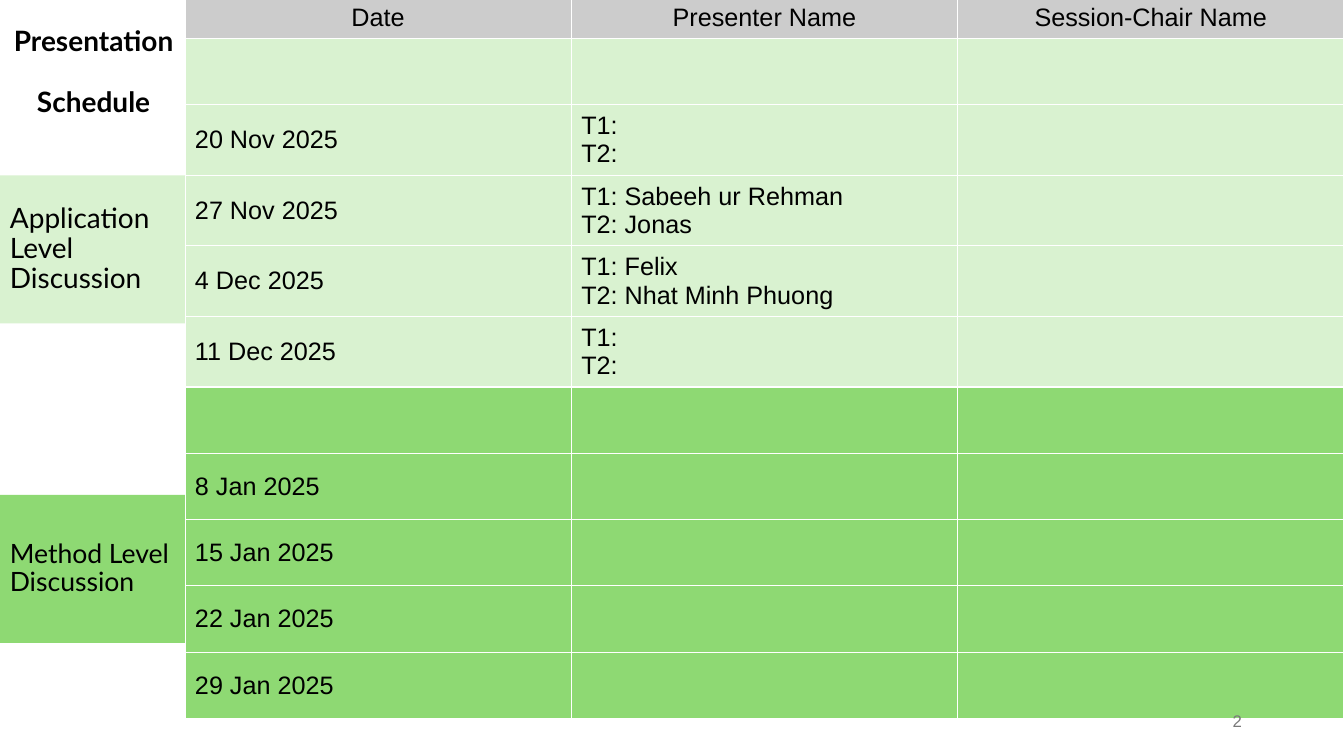
from lxml import etree
from pptx import Presentation
from pptx import util as u
from pptx.dml.color import RGBColor
from pptx.enum import shapes, text
from pptx.oxml import ns

COLORS = {"header": "CCCCCC", "application": "D9F2D0", "method": "8ED973",
          "border": "FFFFFF", "ink": "000000", "number": "797979"}
TITLE = ["Presentation", "Schedule"]
HEADER = ["Date", "Presenter Name", "Session-Chair Name"]
SCHEDULE = [
    ("application", "", []),
    ("application", "20 Nov 2025", ["T1:", "T2:"]),
    ("application", "27 Nov 2025", ["T1: Sabeeh ur Rehman", "T2: Jonas"]),
    ("application", "4 Dec 2025", ["T1: Felix", "T2: Nhat Minh Phuong"]),
    ("application", "11 Dec 2025", ["T1:", "T2:"]),
    ("method", "", []),
    ("method", "8 Jan 2025", []),
    ("method", "15 Jan 2025", []),
    ("method", "22 Jan 2025", []),
    ("method", "29 Jan 2025", []),
]
LABELS = [("application", "Application Level Discussion", 4.42, 20),
          ("method", "Method Level Discussion", 12.47, 19)]
PAGE_NUMBER = "2"

SLIDE_WIDTH, SLIDE_HEIGHT = 33.87, 19.05
SIDE_WIDTH, LABEL_HEIGHT = 4.66, 3.73
TOP, HEADER_HEIGHT, ROW_HEIGHT = -0.05, 0.97, 1.67
COLUMN_WIDTH = (SLIDE_WIDTH - SIDE_WIDTH) / len(HEADER)


def rgb(name):
    return RGBColor.from_string(COLORS[name])


def write(frame, lines, size, font="Arial", color="ink", align=text.PP_ALIGN.LEFT,
          bold=False, spacing=None, gap=0):
    frame.word_wrap = True
    for index, line in enumerate(lines):
        paragraph = frame.add_paragraph() if index else frame.paragraphs[0]
        paragraph.text = line
        paragraph.alignment = align
        if spacing:
            paragraph.line_spacing = spacing
        if index and gap:
            paragraph.space_before = u.Pt(gap)
        paragraph.font.name = font
        paragraph.font.size = u.Pt(size)
        paragraph.font.bold = bold
        paragraph.font.color.rgb = rgb(color)


def add_text(slide, left, top, width, height, lines, size, **style):
    box = slide.shapes.add_textbox(u.Cm(left), u.Cm(top), u.Cm(width), u.Cm(height))
    box.text_frame.vertical_anchor = text.MSO_ANCHOR.MIDDLE
    write(box.text_frame, lines, size, **style)


def add_label(slide, color, label, top, size):
    shape = slide.shapes.add_shape(shapes.MSO_SHAPE.RECTANGLE, 0, u.Cm(top),
                                   u.Cm(SIDE_WIDTH), u.Cm(LABEL_HEIGHT))
    shape.shadow.inherit = False
    shape.fill.solid()
    shape.fill.fore_color.rgb = rgb(color)
    shape.line.fill.background()
    shape.text_frame.vertical_anchor = text.MSO_ANCHOR.MIDDLE
    write(shape.text_frame, [label], size, font="Lato", spacing=0.9)


def style_cell(cell, color):
    properties = cell._tc.get_or_add_tcPr()
    for side in ("lnL", "lnR", "lnT", "lnB"):
        line = etree.SubElement(properties, ns.qn(f"a:{side}"), w=str(u.Pt(1)))
        fill = etree.SubElement(line, ns.qn("a:solidFill"))
        etree.SubElement(fill, ns.qn("a:srgbClr"), val=COLORS["border"])
    cell.fill.solid()
    cell.fill.fore_color.rgb = rgb(color)
    cell.vertical_anchor = text.MSO_ANCHOR.MIDDLE


def add_schedule(slide):
    rows = [("header", [[name] for name in HEADER])]
    rows += [(color, [[date], presenters or [""], [""]])
             for color, date, presenters in SCHEDULE]
    height = HEADER_HEIGHT + ROW_HEIGHT * len(SCHEDULE)
    table = slide.shapes.add_table(
        len(rows), len(HEADER), u.Cm(SIDE_WIDTH), u.Cm(TOP),
        u.Cm(SLIDE_WIDTH - SIDE_WIDTH), u.Cm(height)).table
    for column in table.columns:
        column.width = u.Cm(COLUMN_WIDTH)
    for row_index, (color, cells) in enumerate(rows):
        is_header = color == "header"
        table.rows[row_index].height = u.Cm(HEADER_HEIGHT if is_header else ROW_HEIGHT)
        align = text.PP_ALIGN.CENTER if is_header else text.PP_ALIGN.LEFT
        for column_index, lines in enumerate(cells):
            cell = table.cell(row_index, column_index)
            style_cell(cell, color)
            write(cell.text_frame, lines, 18, align=align)


def main():
    presentation = Presentation()
    presentation.slide_width = u.Cm(SLIDE_WIDTH)
    presentation.slide_height = u.Cm(SLIDE_HEIGHT)
    slide = presentation.slides.add_slide(presentation.slide_layouts[6])
    add_text(slide, 0.03, TOP, SIDE_WIDTH, 3.78, TITLE, 20, font="Lato", bold=True,
             align=text.PP_ALIGN.CENTER, spacing=0.9, gap=22)
    add_schedule(slide)
    for label in LABELS:
        add_label(slide, *label)
    add_text(slide, 23.93, 17.65, 7.62, 1.02, [PAGE_NUMBER], 12, color="number",
             align=text.PP_ALIGN.RIGHT)
    presentation.save("out.pptx")


if __name__ == "__main__":
    main()
